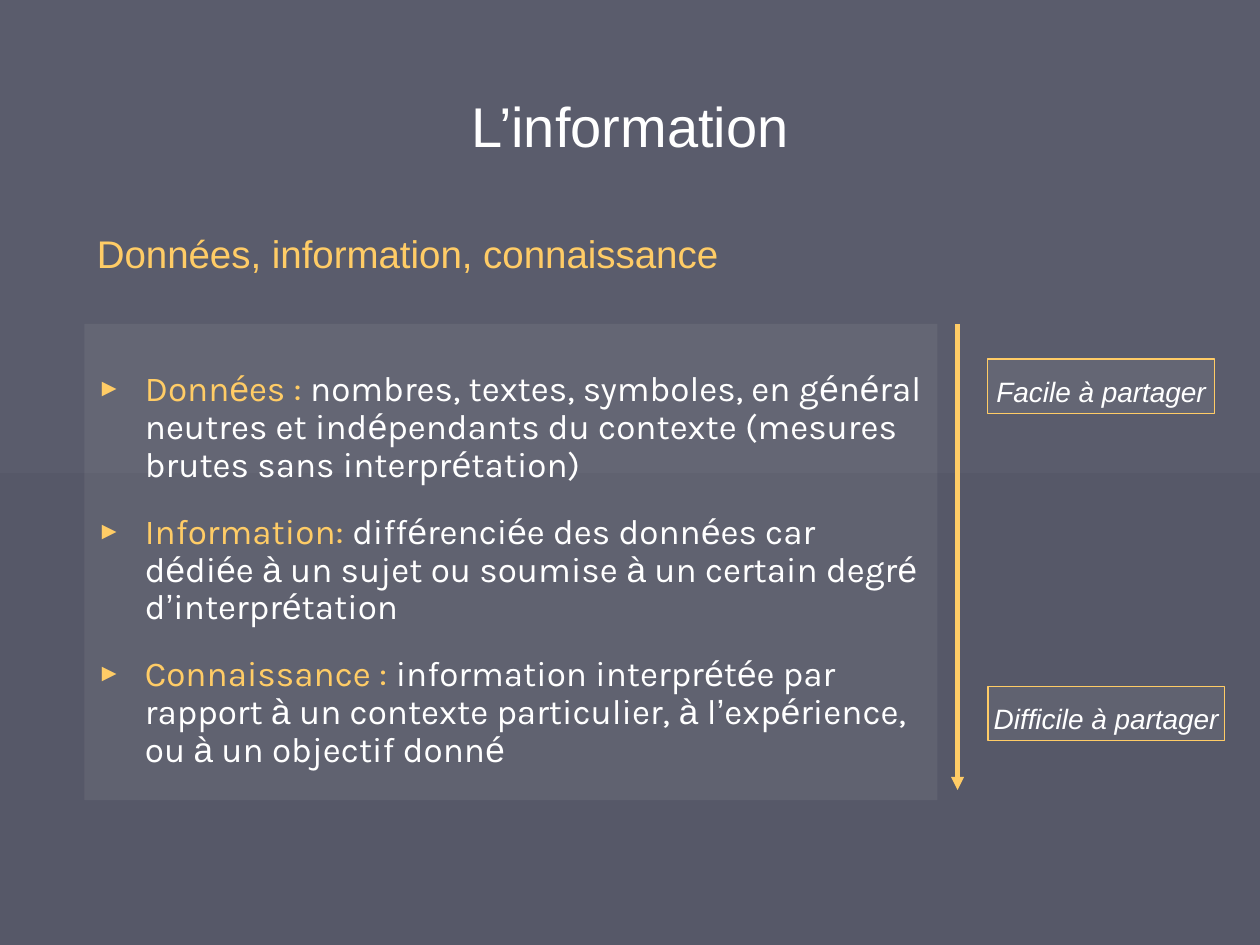
from itertools import groupby

from pptx import Presentation
from pptx.dml.color import RGBColor
from pptx.enum.shapes import MSO_CONNECTOR as Connector, MSO_SHAPE as Shape
from pptx.enum.text import MSO_ANCHOR as Anchor, MSO_AUTO_SIZE as AutoSize, PP_ALIGN as Align
from pptx.oxml.ns import qn
from pptx.util import Inches, Pt
from lxml.etree import SubElement

WIDTH, HEIGHT = Inches(10), Inches(7.5)
GOLD, WHITE, VEIL = "FFCC66", "FFFFFF", "C0C0C0"
ARIAL_CHARACTERS = "éà’"
DEFINITIONS = [
    ("Données :", " nombres, textes, symboles, en général neutres et indépendants "
                  "du contexte (mesures brutes sans interprétation)"),
    ("Information: ", "différenciée des données car dédiée à un sujet ou soumise "
                      "à un certain degré d’interprétation"),
    ("Connaissance :", " information interprétée par rapport à un contexte particulier, "
                       "à l’expérience, ou à un objectif donné"),
]


def color(value):
    return RGBColor.from_string(value)


def inches(*lengths):
    return [Inches(length) for length in lengths]


def place(shape, box):
    shape.left, shape.top, shape.width, shape.height = inches(*box)


def add_run(paragraph, text, size, ink, font="Arial", italic=False):
    run = paragraph.add_run()
    run.text = text
    run.font.size, run.font.name, run.font.italic = Pt(size), font, italic
    run.font.color.rgb = color(ink)


def add_mixed_runs(paragraph, text, size, ink):
    """Set text in Karla, with accented letters and apostrophes in Arial."""
    for accented, letters in groupby(text, lambda letter: letter in ARIAL_CHARACTERS):
        add_run(paragraph, "".join(letters), size, ink, "Arial" if accented else "Karla")


def fill_veil(shape):
    """Fill with a grey that is 10 % opaque."""
    shape.fill.solid()
    shape.fill.fore_color.rgb = color(VEIL)
    tint = shape.fill._xPr.find(qn("a:solidFill"))[0]
    SubElement(tint, qn("a:alpha"), val="10000")


def add_bullet(paragraph, hanging):
    properties = paragraph._p.get_or_add_pPr()
    properties.set("marL", str(hanging))
    properties.set("indent", str(-hanging))
    bullet_color = SubElement(properties, qn("a:buClr"))
    SubElement(bullet_color, qn("a:srgbClr"), val=GOLD)
    SubElement(properties, qn("a:buSzPct"), val="70000")
    SubElement(properties, qn("a:buFont"), typeface="Arial")
    SubElement(properties, qn("a:buChar"), char="►")


def paint_background(slide):
    fill = slide.background.fill
    fill.gradient()
    fill.gradient_angle = 270
    for stop, shade in zip(fill.gradient_stops, ("5A5C6C", "565868")):
        stop.color.rgb = color(shade)


def write_title(slide, box):
    title = slide.shapes.title
    place(title, box)
    frame = title.text_frame
    frame.vertical_anchor, frame.auto_size = Anchor.MIDDLE, AutoSize.NONE
    frame.paragraphs[0].alignment = Align.CENTER
    add_run(frame.paragraphs[0], "L’information", 32, WHITE)


def write_subtitle(slide, box):
    frame = slide.shapes.add_textbox(*inches(*box)).text_frame
    frame.word_wrap = True
    add_run(frame.paragraphs[0], "Données, information, connaissance", 22, GOLD)


def write_definitions(slide, box):
    body = slide.placeholders[1]
    place(body, box)
    fill_veil(body)
    frame = body.text_frame
    frame.auto_size, frame.vertical_anchor = AutoSize.NONE, Anchor.TOP
    frame.margin_top = Inches(0.38)
    for index, (term, meaning) in enumerate(DEFINITIONS):
        paragraph = frame.add_paragraph() if index else frame.paragraphs[0]
        paragraph.line_spacing = 0.9
        paragraph.space_before, paragraph.space_after = Pt(0), Pt(16.5)
        add_bullet(paragraph, Inches(0.38))
        add_mixed_runs(paragraph, term, 20, GOLD)
        add_mixed_runs(paragraph, meaning, 20, WHITE)


def draw_scale_arrow(slide, x, top, bottom):
    arrow = slide.shapes.add_connector(Connector.STRAIGHT, *inches(x, top, x, bottom))
    arrow.line.color.rgb = color(GOLD)
    arrow.line.width = Pt(2.5)
    SubElement(arrow.line._get_or_add_ln(), qn("a:tailEnd"), type="triangle")
    SubElement(arrow._element.spPr, qn("a:effectLst"))


def draw_label(slide, text, box):
    label = slide.shapes.add_shape(Shape.RECTANGLE, *inches(*box))
    label.shadow.inherit = False
    fill_veil(label)
    label.line.color.rgb = color(GOLD)
    label.line.width = Pt(0.75)
    frame = label.text_frame
    frame.word_wrap, frame.vertical_anchor = False, Anchor.MIDDLE
    paragraph = frame.paragraphs[0]
    paragraph.alignment, paragraph.line_spacing = Align.CENTER, 1.3
    paragraph.space_before = paragraph.space_after = Pt(3)
    add_run(paragraph, text, 16, WHITE, italic=True)


def main():
    presentation = Presentation()
    presentation.slide_width, presentation.slide_height = WIDTH, HEIGHT
    slide = presentation.slides.add_slide(presentation.slide_layouts[1])
    left, top, label_left = 0.67, 2.57, 7.84

    paint_background(slide)
    write_title(slide, (0, 0.6, 10, 0.79))
    write_definitions(slide, (left, top, 6.77, 3.78))
    draw_scale_arrow(slide, 7.6, top, top + 3.7)
    draw_label(slide, "Facile à partager", (label_left, 2.85, 1.8, 0.43))
    draw_label(slide, "Difficile à partager", (label_left, 5.45, 1.88, 0.43))
    write_subtitle(slide, (left, 1.78, 7.68, 0.47))
    presentation.save("out.pptx")


if __name__ == "__main__":
    main()
